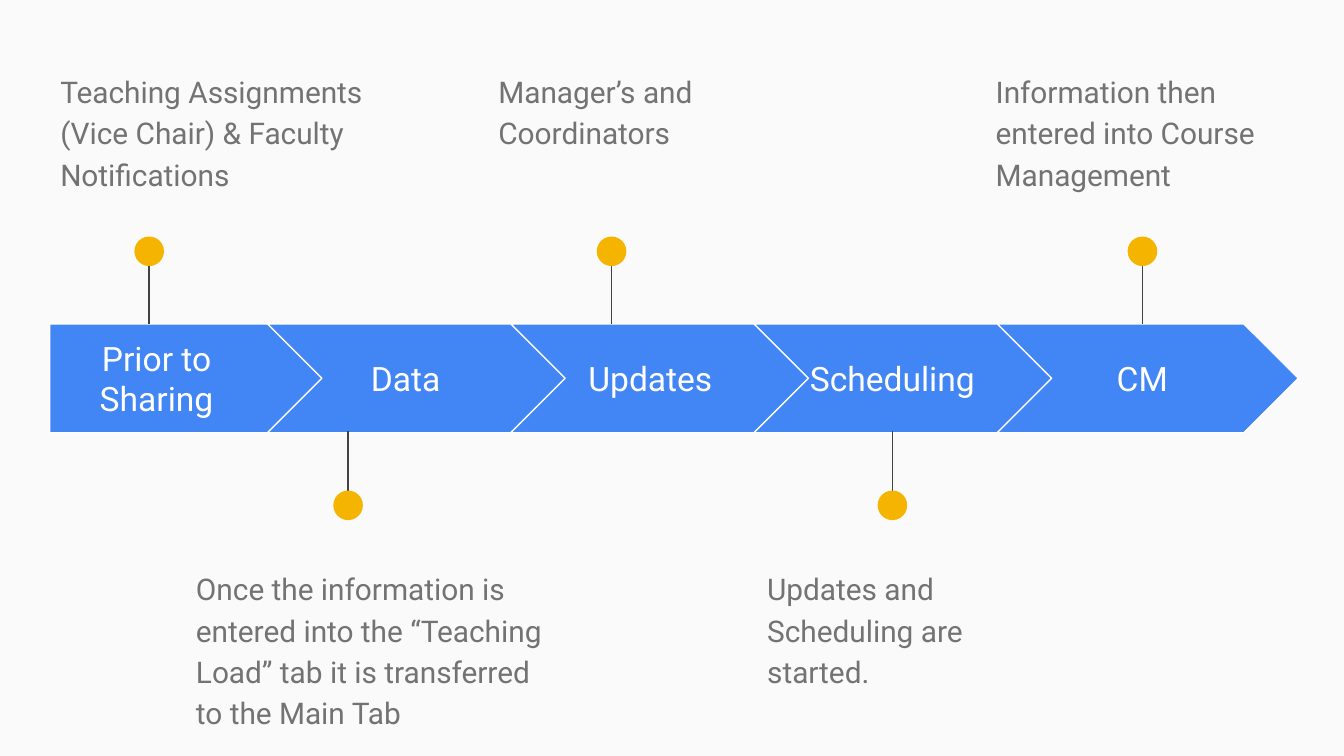
from pptx import Presentation
from pptx.dml.color import RGBColor
from pptx.enum.shapes import MSO_CONNECTOR, MSO_SHAPE
from pptx.enum.text import MSO_ANCHOR, PP_ALIGN
from pptx.oxml.ns import qn
from pptx.util import Inches, Pt
from lxml import etree


def color(hex_value):
    return RGBColor.from_string(hex_value)


def add_text(slide, text, left, top, width, height, size, hex_value):
    frame = slide.shapes.add_textbox(
        Inches(left), Inches(top), Inches(width), Inches(height)).text_frame
    frame.word_wrap = True
    frame.margin_left = frame.margin_right = Inches(0.1)
    frame.margin_top = frame.margin_bottom = Inches(0.1)
    frame.text = text
    font = frame.paragraphs[0].runs[0].font
    font.name, font.size = "Roboto", Pt(size)
    font.color.rgb = color(hex_value)
    return frame


# Widescreen 16:9 slide
prs = Presentation()
prs.slide_width, prs.slide_height = Inches(10), Inches(10 * 9 / 16)
slide = prs.slides.add_slide(prs.slide_layouts[6])
slide.background.fill.solid()
slide.background.fill.fore_color.rgb = color("FAFAFA")

BAND_TOP, BAND_HEIGHT = 2.41, 0.81
FIRST_CHEVRON, STEP_PITCH = 1.99, 1.81
DOT = 0.22

# label, label left, label width, pin x, pin above, note, note left, width, height
steps = [
    ("Prior to Sharing", 0.37, 1.59, 1.11, True,
     "Teaching Assignments (Vice Chair) & Faculty Notifications", 0.35, 2.45, 1.28),
    ("Data ", 2.33, 1.44, 2.59, False,
     "Once the information is entered into the “Teaching Load” tab "
     "it is transferred to the Main Tab", 1.36, 2.81, 1.52),
    ("Updates", 4.12, 1.44, 4.55, True,
     "Manager’s and Coordinators", 3.61, 2.45, 0.99),
    ("Scheduling", 5.92, 1.44, 6.64, False,
     "Updates and Scheduling are started.", 5.61, 2.45, 0.99),
    ("CM", 7.78, 1.44, 8.5, True,
     "Information then entered into Course Management", 7.31, 2.45, 0.99),
]

for index, (label, label_left, label_width, pin_x, above,
            note, note_left, note_width, note_height) in enumerate(steps):
    # Process arrow
    if index == 0:
        kind, left, width = MSO_SHAPE.PENTAGON, 0.37, 2.05
    else:
        kind, width = MSO_SHAPE.CHEVRON, 2.24
        left = FIRST_CHEVRON + (index - 1) * STEP_PITCH
    arrow = slide.shapes.add_shape(
        kind, Inches(left), Inches(BAND_TOP), Inches(width), Inches(BAND_HEIGHT))
    arrow.adjustments[0] = 0.5
    arrow.shadow.inherit = False
    arrow.fill.solid()
    arrow.fill.fore_color.rgb = color("4285F4")
    arrow.line.color.rgb = color("FFFFFF")
    arrow.line.width = Pt(0.75)

    # Step label
    label_frame = add_text(slide, label, label_left, 2.56, label_width, 0.51, 18, "FFFFFF")
    label_frame.vertical_anchor = MSO_ANCHOR.MIDDLE
    label_frame.paragraphs[0].alignment = PP_ALIGN.CENTER

    # Pin: stem and dot, grouped
    stem_start, stem_end, dot_top, note_top = (
        (1.8, 2.41, 1.76, 0.41) if above else (3.82, 3.21, 3.65, 4.11))
    pin = slide.shapes.add_group_shape()
    stem = pin.shapes.add_connector(
        MSO_CONNECTOR.STRAIGHT, Inches(pin_x), Inches(stem_start),
        Inches(pin_x), Inches(stem_end))
    stem.line.color.rgb = color("424242")
    stem.line.width = Pt(0.75)
    etree.SubElement(stem._element.spPr, qn("a:effectLst"))
    dot = pin.shapes.add_shape(
        MSO_SHAPE.OVAL, Inches(pin_x - DOT / 2), Inches(dot_top), Inches(DOT), Inches(DOT))
    dot.shadow.inherit = False
    dot.fill.solid()
    dot.fill.fore_color.rgb = color("F4B400")
    dot.line.fill.background()

    # Note
    note_frame = add_text(slide, note, note_left, note_top, note_width, note_height,
                          16, "737373")
    note_frame.paragraphs[0].line_spacing = 1.15
    note_frame.paragraphs[0].space_after = Pt(16)

prs.save("out.pptx")
